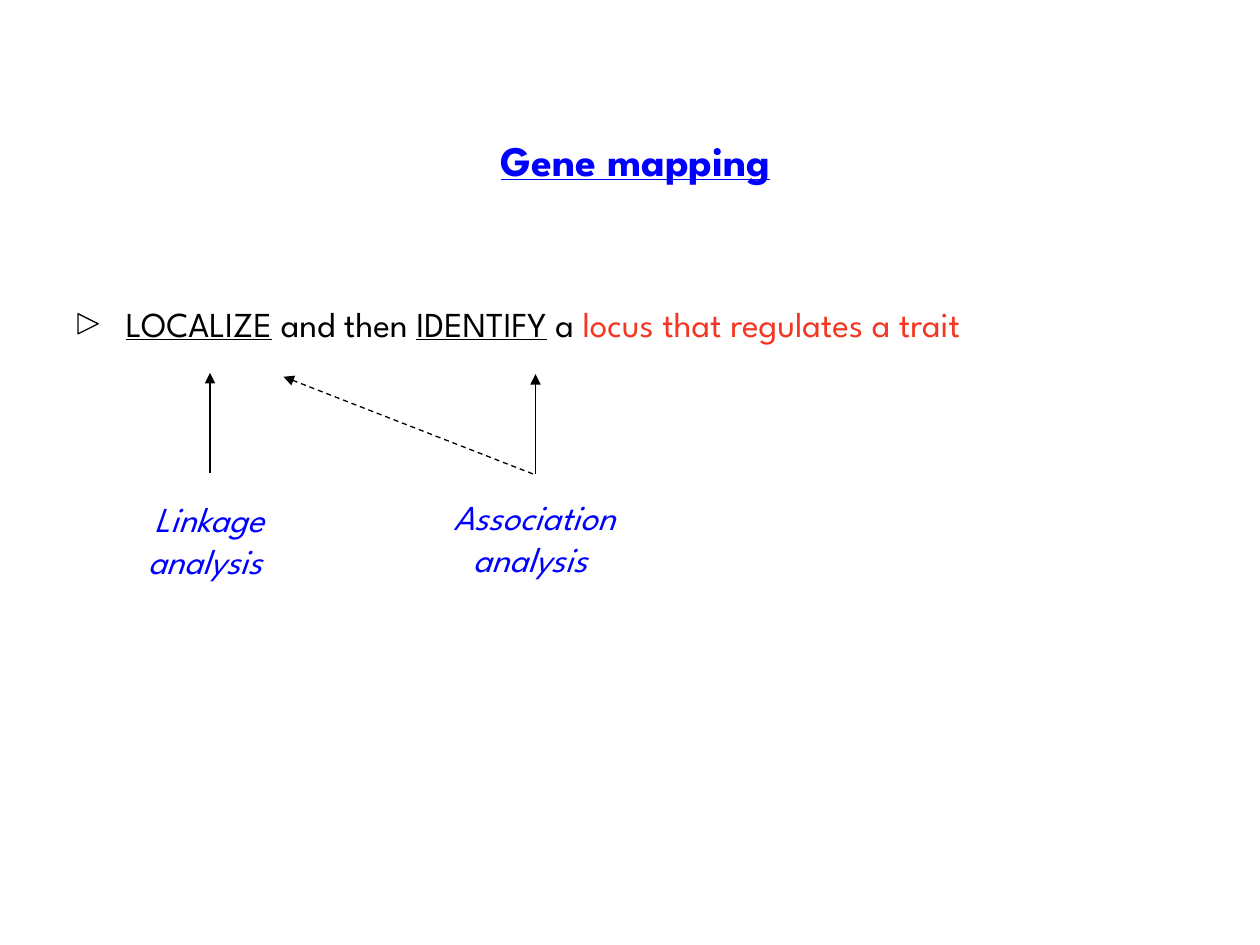
"""Builds the gene mapping slide."""
from lxml import etree
from pptx import Presentation
from pptx.dml.color import RGBColor
from pptx.enum import dml, shapes, text
from pptx.oxml import ns
from pptx.util import Pt

FONT = "League Spartan"
BLUE, BLACK, RED = "0000FF", "000000", "F43622"


def color(code):
    return RGBColor.from_string(code)


def write(box, words, size=20, ink=BLACK, bold=False, slant=False,
          under=False, align=text.PP_ALIGN.LEFT, wrap=True):
    frame = box.text_frame
    frame.word_wrap = wrap
    frame.auto_size = text.MSO_AUTO_SIZE.SHAPE_TO_FIT_TEXT
    frame.vertical_anchor = text.MSO_ANCHOR.TOP
    para = frame.paragraphs[0]
    para.alignment = align
    run = para.add_run()
    run.text = words
    font = run.font
    font.name, font.size = FONT, Pt(size)
    font.bold, font.italic, font.underline = bold, slant, under
    font.color.rgb = color(ink)


deck = Presentation()
deck.slide_width, deck.slide_height = Pt(720), Pt(540)
slide = deck.slides.add_slide(deck.slide_layouts[5])
items = slide.shapes

title = items.title
title.left, title.top, title.width, title.height = Pt(272.9), Pt(73.4), Pt(180.7), Pt(36)
write(title, "Gene mapping", size=24, ink=BLUE, bold=True, under=True,
      align=text.PP_ALIGN.CENTER, wrap=False)

goal = items.add_textbox(Pt(64.8), Pt(169.2), Pt(607), Pt(31))
for words, ink, under in [
    ("LOCALIZE", BLACK, True),
    (" and then ", BLACK, False),
    ("IDENTIFY", BLACK, True),
    (" a ", BLACK, False),
    ("locus that regulates a trait", RED, False),
]:
    write(goal, words, ink=ink, under=under)

mark = items.add_shape(shapes.MSO_SHAPE.ISOSCELES_TRIANGLE,
                       Pt(44.6), Pt(179.3), Pt(11.5), Pt(11.5))
mark.rotation = 90
mark.shadow.inherit = False
mark.fill.background()
mark.line.color.rgb = color(BLACK)
mark.line.width = Pt(0.75)

for words, left, top in [
    ("Linkage analysis ", 54, 280.8),
    ("Association analysis ", 239.8, 279.4),
]:
    label = items.add_textbox(Pt(left), Pt(top), Pt(131), Pt(55.4))
    write(label, words, ink=BLUE, slant=True, align=text.PP_ALIGN.CENTER)

for tip_x, tip_y, end_x, end_y, dash in [
    (120, 213.1, 120, 270, False),
    (306, 213.8, 306, 270.7, False),
    (162, 215.3, 306, 271.4, True),
]:
    arrow = items.add_connector(shapes.MSO_CONNECTOR.STRAIGHT,
                                Pt(tip_x), Pt(tip_y), Pt(end_x), Pt(end_y))
    arrow.line.color.rgb = color(BLACK)
    arrow.line.width = Pt(0.75)
    if dash:
        arrow.line.dash_style = dml.MSO_LINE.DASH
    props = arrow.line._get_or_add_ln()
    etree.SubElement(props, ns.qn("a:headEnd"), type="triangle")
    etree.SubElement(props.getparent(), ns.qn("a:effectLst"))

deck.save("out.pptx")
